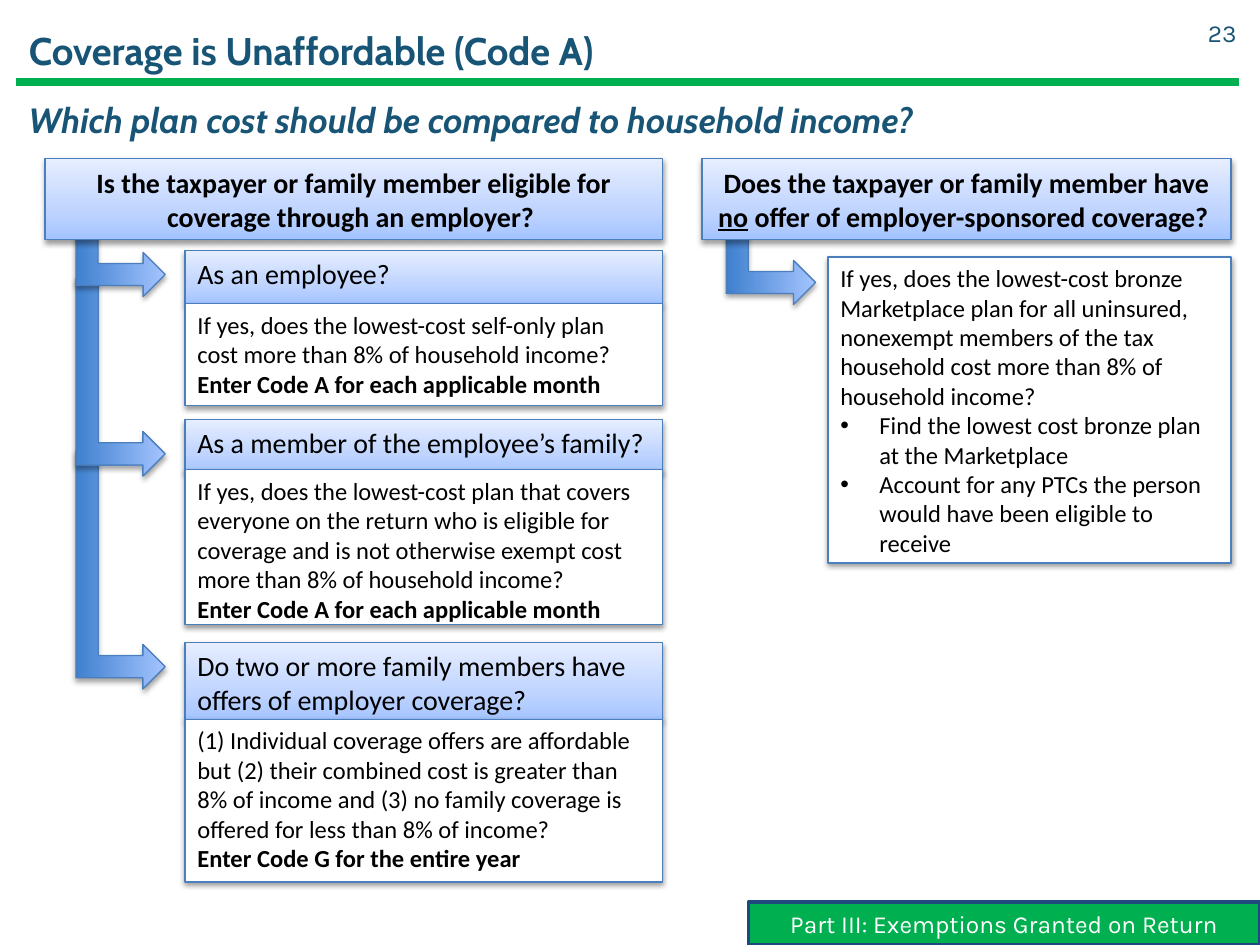
from copy import deepcopy

from lxml.etree import SubElement
from pptx import Presentation
from pptx.dml.color import RGBColor
from pptx.enum.shapes import MSO_CONNECTOR, MSO_SHAPE
from pptx.enum.text import MSO_ANCHOR, PP_ALIGN
from pptx.oxml.ns import qn
from pptx.util import Cm, Pt

WHITE = RGBColor(0xFF, 0xFF, 0xFF)
BLACK = RGBColor(0x00, 0x00, 0x00)
GREEN = RGBColor(0x00, 0xB0, 0x50)
TEAL = RGBColor(0x17, 0x54, 0x75)
NAVY = RGBColor(0x1F, 0x49, 0x7D)
OUTLINE = RGBColor(0x4B, 0x7E, 0xBC)
LIGHT_BLUE = RGBColor(0xA4, 0xC4, 0xFF)
PALE_BLUE = RGBColor(0xBF, 0xD4, 0xFF)
ICE_BLUE = RGBColor(0xE6, 0xEE, 0xFF)
DEEP_BLUE = RGBColor(0x3F, 0x80, 0xCE)

HEADING_STOPS = [(0, LIGHT_BLUE), (0.35, PALE_BLUE), (1, ICE_BLUE)]
ARROW_STOPS = [(0, DEEP_BLUE), (1, LIGHT_BLUE)]

BRANCH_LEFT, BRANCH_WIDTH = 3.73, 9.63
ARROW_WIDTH = 1.8
HEADER_TOP, HEADER_HEIGHT = 3.2, 1.63
CODE_A = "Enter Code A for each applicable month"

BRANCHES = [
    (5.05, 1.07, "As an employee?", 6.12, 2.06,
     "If yes, does the lowest-cost self-only plan cost more than 8% of "
     "household income?", CODE_A),
    (8.46, 1.07, "As a member of the employee’s family?", 9.47, 3.12,
     "If yes, does the lowest-cost plan that covers everyone on the return "
     "who is eligible for coverage and is not otherwise exempt cost more than "
     "8% of household income?", CODE_A),
    (12.95, 1.57, "Do two or more family members have offers of employer "
     "coverage?", 14.5, 3.28,
     "(1) Individual coverage offers are affordable but (2) their combined "
     "cost is greater than 8% of income and (3) no family coverage is offered "
     "for less than 8% of income?", "Enter Code G for the entire year"),
]

MARKETPLACE_TEXT = [
    "If yes, does the lowest-cost bronze Marketplace plan for all uninsured, "
    "nonexempt members of the tax household cost more than 8% of household "
    "income?",
    "Find the lowest cost bronze plan at the Marketplace",
    "Account for any PTCs the person would have been eligible to receive",
]


def format_text(shape, size, color=BLACK, name="Calibri", bold=False,
                italic=False, align=PP_ALIGN.LEFT, anchor=MSO_ANCHOR.TOP):
    shape.text_frame.word_wrap = True
    shape.text_frame.vertical_anchor = anchor
    for paragraph in shape.text_frame.paragraphs:
        paragraph.alignment = align
        for run in paragraph.runs:
            run.font.name = name
            run.font.size = Pt(size)
            run.font.bold = bold
            run.font.italic = italic
            run.font.color.rgb = color


def add_text(slide, left, top, width, height, text, size, **style):
    box = slide.shapes.add_textbox(Cm(left), Cm(top), Cm(width), Cm(height))
    box.text_frame.text = text
    format_text(box, size, TEAL, **style)


def add_shadow(shape, distance, opacity):
    shape.shadow.inherit = False
    effects = shape.element.spPr.find(qn("a:effectLst"))
    shadow = SubElement(effects, qn("a:outerShdw"), blurRad=str(Pt(3.1)),
                        dist=str(Pt(distance)), dir="5400000", rotWithShape="0")
    color = SubElement(shadow, qn("a:srgbClr"), val=str(BLACK))
    SubElement(color, qn("a:alpha"), val=str(opacity * 1000))


def fill_gradient(shape, stops):
    shape.fill.gradient()
    shape.fill.gradient_angle = 90
    stop_list = shape.element.spPr.find(qn("a:gradFill")).find(qn("a:gsLst"))
    while len(stop_list) < len(stops):
        stop_list.append(deepcopy(stop_list[-1]))
    for stop, (position, color) in zip(shape.fill.gradient_stops, stops):
        stop.position = position
        stop.color.rgb = color


def add_box(slide, left, top, width, height, text, stops=None):
    box = slide.shapes.add_shape(MSO_SHAPE.RECTANGLE, Cm(left), Cm(top),
                                 Cm(width), Cm(height))
    if stops:
        fill_gradient(box, stops)
    else:
        box.fill.solid()
        box.fill.fore_color.rgb = WHITE
    box.line.color.rgb = OUTLINE
    box.line.width = Pt(0.75)
    add_shadow(box, 1.6, 38)
    box.text_frame.text = text
    return box


def add_header(slide, left, width, text, underlined="", ending=""):
    header = add_box(slide, left, HEADER_TOP, width, HEADER_HEIGHT, text,
                     HEADING_STOPS)
    if underlined:
        paragraph = header.text_frame.paragraphs[0]
        run = paragraph.add_run()
        run.text = underlined
        run.font.underline = True
        paragraph.add_run().text = ending
    format_text(header, 16, bold=True, align=PP_ALIGN.CENTER,
                anchor=MSO_ANCHOR.MIDDLE)


def add_branch(slide, heading_top, heading_height, heading, answer_top,
               answer_height, question, instruction):
    heading_box = add_box(slide, BRANCH_LEFT, heading_top, BRANCH_WIDTH,
                          heading_height, heading, HEADING_STOPS)
    format_text(heading_box, 16)
    answer_box = add_box(slide, BRANCH_LEFT, answer_top, BRANCH_WIDTH,
                         answer_height, f"{question}\n{instruction}")
    format_text(answer_box, 14)
    answer_box.text_frame.paragraphs[-1].runs[0].font.bold = True


def add_bent_arrow(slide, left, top, length):
    offset = (length - ARROW_WIDTH) / 2
    arrow = slide.shapes.add_shape(MSO_SHAPE.BENT_UP_ARROW, Cm(left - offset),
                                   Cm(top + offset), Cm(length), Cm(ARROW_WIDTH))
    arrow.rotation = 90
    fill_gradient(arrow, ARROW_STOPS)
    arrow.line.color.rgb = OUTLINE
    arrow.line.width = Pt(0.75)
    add_shadow(arrow, 1.8, 35)


def add_bullet(paragraph):
    properties = paragraph._p.get_or_add_pPr()
    properties.set("marL", str(Cm(0.79)))
    properties.set("indent", str(-Cm(0.79)))
    SubElement(properties, qn("a:buFont"), typeface="Arial")
    SubElement(properties, qn("a:buChar"), char="•")


def add_marketplace_box(slide):
    box = add_box(slide, 16.69, 5.18, 8.13, 6.17, "\n".join(MARKETPLACE_TEXT))
    format_text(box, 14)
    for paragraph in box.text_frame.paragraphs[1:]:
        add_bullet(paragraph)


def add_title(slide):
    rule = slide.shapes.add_connector(MSO_CONNECTOR.STRAIGHT, Cm(0.33), Cm(1.65),
                                      Cm(24.97), Cm(1.65))
    rule.line.color.rgb = GREEN
    rule.line.width = Pt(4.75)
    SubElement(rule.element.spPr, qn("a:effectLst"))
    title = slide.shapes.title
    title.left, title.top = Cm(0.33), Cm(0.28)
    title.width, title.height = Cm(21.56), Cm(1.45)
    title.text_frame.text = "Coverage is Unaffordable (Code A)"
    format_text(title, 22, TEAL, "Cabin", bold=True, anchor=MSO_ANCHOR.MIDDLE)


def add_footer(slide):
    footer = slide.shapes.add_shape(MSO_SHAPE.RECTANGLE, Cm(15.09), Cm(18.19),
                                    Cm(10.31), Cm(0.86))
    footer.shadow.inherit = False
    footer.fill.solid()
    footer.fill.fore_color.rgb = GREEN
    footer.line.color.rgb = NAVY
    footer.line.width = Pt(2.25)
    footer.text_frame.text = "Part III: Exemptions Granted on Return"
    format_text(footer, 14, WHITE, "Karla", align=PP_ALIGN.CENTER,
                anchor=MSO_ANCHOR.MIDDLE)


def main():
    presentation = Presentation()
    presentation.slide_width, presentation.slide_height = Cm(25.4), Cm(19.05)
    slide = presentation.slides.add_slide(presentation.slide_layouts[5])
    add_title(slide)
    add_text(slide, 0.33, 1.63, 23.6, 1.32,
             "Which plan cost should be compared to household income?", 20,
             name="Cabin", bold=True, italic=True, anchor=MSO_ANCHOR.BOTTOM)
    add_text(slide, 23.88, 0.15, 1.3, 1.02, "23", 14, name="Karla",
             align=PP_ALIGN.RIGHT, anchor=MSO_ANCHOR.MIDDLE)
    add_footer(slide)
    for branch in BRANCHES:
        add_branch(slide, *branch)
    for top, length in [(9.09, 4.8), (5.61, 3.99), (4.2, 1.78)]:
        add_bent_arrow(slide, 1.53, top, length)
    add_header(slide, 0.91, 12.45, "Is the taxpayer or family member eligible "
               "for coverage through an employer? ")
    add_marketplace_box(slide)
    add_bent_arrow(slide, 14.64, 4.36, 1.78)
    add_header(slide, 14.15, 10.67, "Does the taxpayer or family member have ",
               "no", " offer of employer-sponsored coverage? ")
    presentation.save("out.pptx")


if __name__ == "__main__":
    main()
